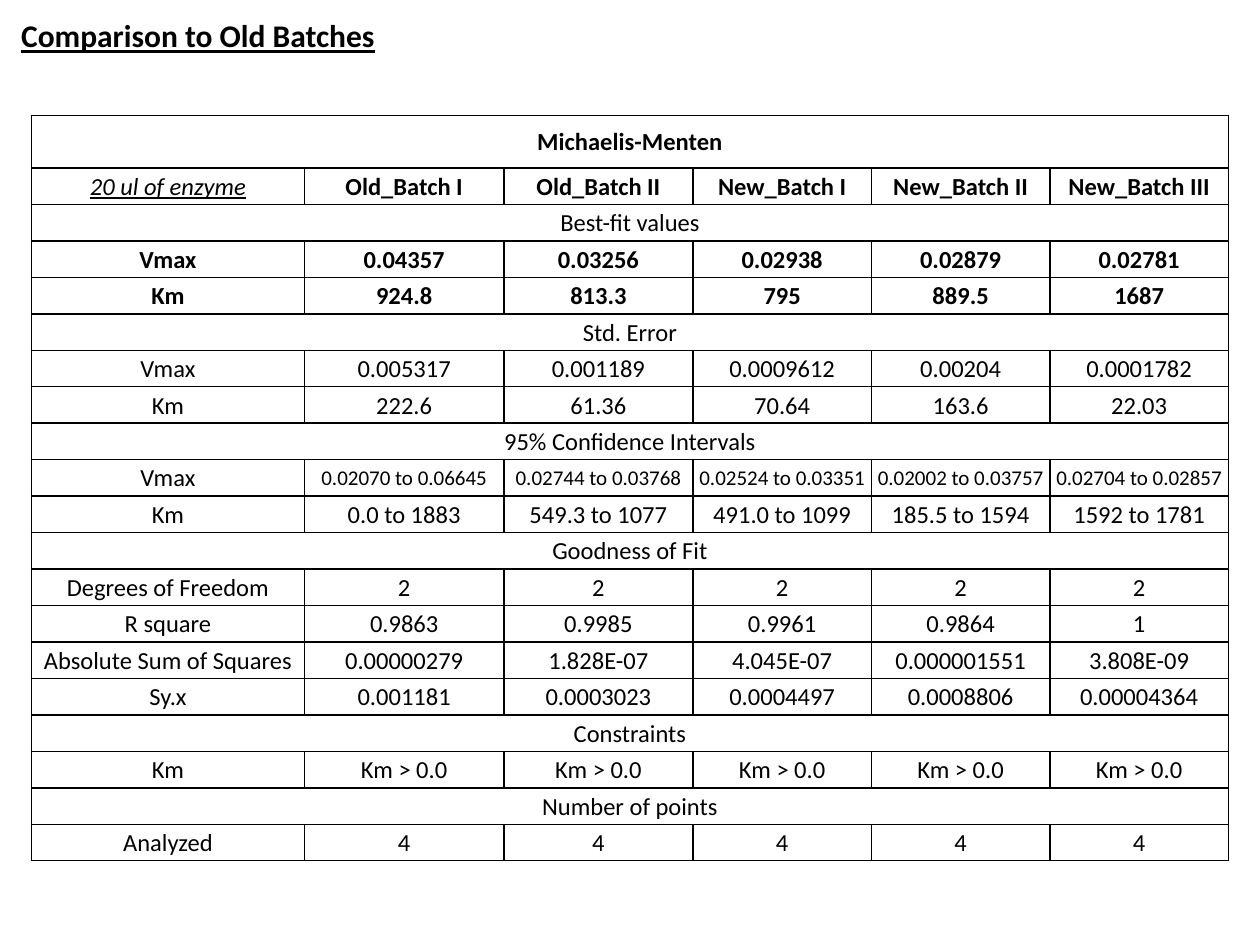
from dataclasses import dataclass

from lxml.etree import SubElement
from pptx import Presentation
from pptx.dml.color import RGBColor
from pptx.enum.text import MSO_ANCHOR as Anchor, MSO_AUTO_SIZE as AutoSize, PP_ALIGN as Align
from pptx.oxml.ns import qn
from pptx.util import Pt


@dataclass(frozen=True)
class Theme:
    font: str = "Calibri"
    ink: str = "000000"
    title: int = 18
    body: int = 14
    interval: int = 12
    border: int = 1


THEME = Theme()
COL_WIDTHS = [156, 114, 108, 102, 102, 102]
HEADER_HEIGHT = 30
ROW_HEIGHT = 20.84

# A row with a single entry is a heading that spans all columns.
ROWS = [
    ["Michaelis-Menten"],
    ["20 ul of enzyme", "Old_Batch I", "Old_Batch II", "New_Batch I", "New_Batch II", "New_Batch III"],
    ["Best-fit values"],
    ["Vmax", "0.04357", "0.03256", "0.02938", "0.02879", "0.02781"],
    ["Km", "924.8", "813.3", "795", "889.5", "1687"],
    ["Std. Error"],
    ["Vmax", "0.005317", "0.001189", "0.0009612", "0.00204", "0.0001782"],
    ["Km", "222.6", "61.36", "70.64", "163.6", "22.03"],
    ["95% Confidence Intervals"],
    ["Vmax", "0.02070 to 0.06645", "0.02744 to 0.03768", "0.02524 to 0.03351",
     "0.02002 to 0.03757", "0.02704 to 0.02857"],
    ["Km", "0.0 to 1883", "549.3 to 1077", "491.0 to 1099", "185.5 to 1594", "1592 to 1781"],
    ["Goodness of Fit"],
    ["Degrees of Freedom"] + ["2"] * 5,
    ["R square", "0.9863", "0.9985", "0.9961", "0.9864", "1"],
    ["Absolute Sum of Squares", "0.00000279", "1.828E-07", "4.045E-07", "0.000001551", "3.808E-09"],
    ["Sy.x", "0.001181", "0.0003023", "0.0004497", "0.0008806", "0.00004364"],
    ["Constraints"],
    ["Km"] + ["Km > 0.0"] * 5,
    ["Number of points"],
    ["Analyzed"] + ["4"] * 5,
]
BOLD_ROWS = {0, 1, 3, 4}
CORNER = (1, 0)
INTERVAL_ROW = 9


def write_text(tf, text, size=THEME.body, bold=False, italic=False, underline=False, align=Align.LEFT):
    p = tf.paragraphs[0]
    p.alignment = align
    r = p.add_run()
    r.text = text
    font = r.font
    font.name, font.size = THEME.font, Pt(size)
    font.bold, font.italic, font.underline = bold, italic, underline
    font.color.rgb = RGBColor.from_string(THEME.ink)


def add_title(slide, text):
    tf = slide.shapes.add_textbox(Pt(5), Pt(5.8), Pt(218), Pt(29)).text_frame
    tf.word_wrap = False
    tf.auto_size = AutoSize.SHAPE_TO_FIT_TEXT
    write_text(tf, text, size=THEME.title, bold=True, underline=True)


def style_cell(cell):
    """Give the cell thin borders, no fill and tight margins."""
    tc_pr = cell._tc.get_or_add_tcPr()
    for side in ("lnL", "lnR", "lnT", "lnB"):
        ln = SubElement(tc_pr, qn(f"a:{side}"), w=str(Pt(THEME.border)))
        fill = SubElement(ln, qn("a:solidFill"))
        SubElement(fill, qn("a:srgbClr"), val=THEME.ink)
    cell.fill.background()
    cell.margin_left = cell.margin_right = cell.margin_top = Pt(0.75)
    cell.margin_bottom = 0
    cell.vertical_anchor = Anchor.MIDDLE


def cell_format(row, col):
    if (row, col) == CORNER:
        return {"italic": True, "underline": True}
    if row == INTERVAL_ROW and col > 0:
        return {"size": THEME.interval}
    return {"bold": row in BOLD_ROWS}


def add_results_table(slide, rows):
    heights = [HEADER_HEIGHT] + [ROW_HEIGHT] * (len(rows) - 1)
    last_col = len(COL_WIDTHS) - 1
    table = slide.shapes.add_table(len(rows), len(COL_WIDTHS), Pt(18), Pt(66),
                                   Pt(sum(COL_WIDTHS)), Pt(sum(heights))).table
    table.first_row = table.horz_banding = False
    for column, width in zip(table.columns, COL_WIDTHS):
        column.width = Pt(width)
    for row, height in zip(table.rows, heights):
        row.height = Pt(height)
    for cell in table.iter_cells():
        style_cell(cell)
    for i, texts in enumerate(rows):
        if len(texts) == 1:
            table.cell(i, 0).merge(table.cell(i, last_col))
        for j, text in enumerate(texts):
            write_text(table.cell(i, j).text_frame, text, align=Align.CENTER, **cell_format(i, j))


def main():
    prs = Presentation()
    prs.slide_width, prs.slide_height = Pt(720), Pt(540)
    slide = prs.slides.add_slide(prs.slide_layouts[6])
    add_title(slide, "Comparison to Old Batches")
    add_results_table(slide, ROWS)
    prs.save("out.pptx")


if __name__ == "__main__":
    main()
